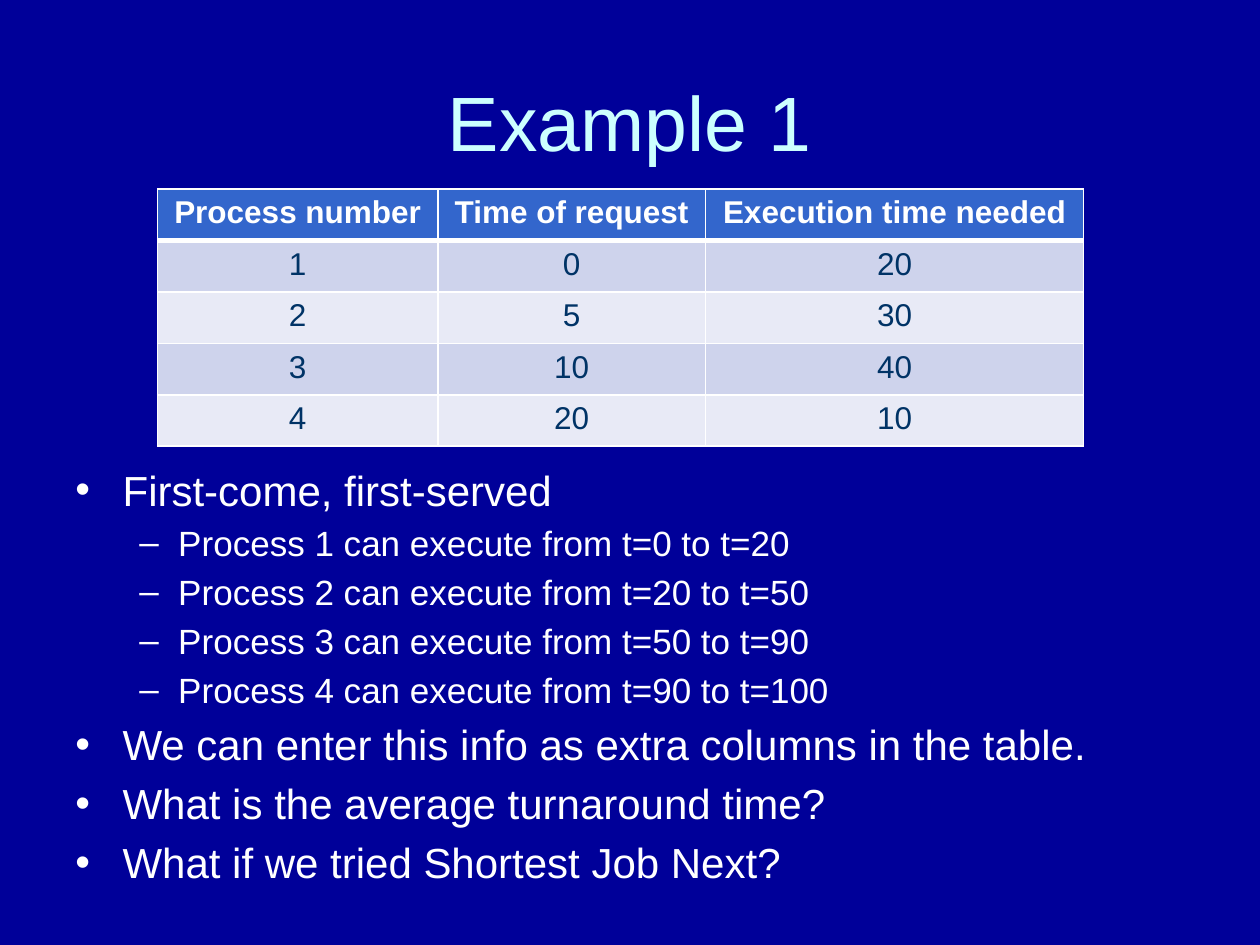
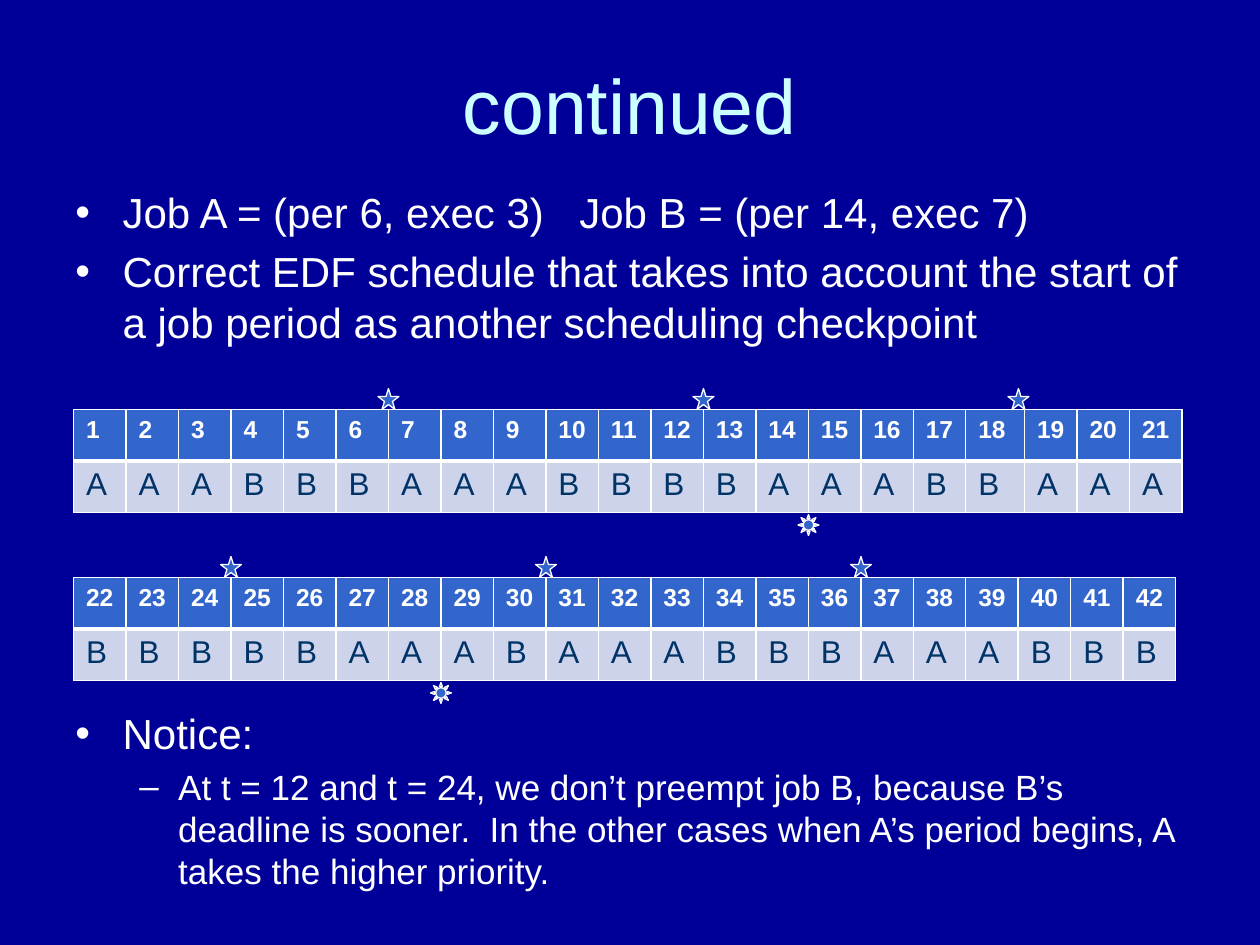
"""Build two slides on process scheduling: first-come first-served and an EDF timeline."""
from dataclasses import dataclass

from lxml import etree
from pptx import Presentation
from pptx.dml.color import RGBColor
from pptx.enum.shapes import MSO_SHAPE
from pptx.enum.text import MSO_ANCHOR, PP_ALIGN
from pptx.oxml.ns import qn
from pptx.util import Emu, Pt

STAR, SUN = MSO_SHAPE.STAR_5_POINT, MSO_SHAPE.SUN
LEFT, CENTER = PP_ALIGN.LEFT, PP_ALIGN.CENTER
TOP, MIDDLE = MSO_ANCHOR.TOP, MSO_ANCHOR.MIDDLE
EMU_PER_PX = 7620
PX_PER_POINT = 5 / 3


@dataclass(frozen=True)
class Theme:
    """Colours and type sizes shared by the slides."""
    font: str = "Arial"
    background: str = "000099"
    title: str = "CCFFFF"
    text: str = "FFFFFF"
    border: str = "FFFFFF"
    accent: str = "3366CC"
    cell_text: str = "003366"
    bands: tuple = ("CED3EC", "E8EAF6")
    title_size: int = 44
    level_sizes: tuple = (24, 20)
    table_size: int = 18
    time_size: int = 14
    line_height: float = 1.2
    paragraph_gap: float = 0.2


THEME = Theme()
BULLETS = (("•", 45, 45), ("–", 98, 37))

EXAMPLE_TITLE = "Example 1"
PROCESSES = [
    ("Process number", "Time of request", "Execution time needed"),
    (1, 0, 20),
    (2, 5, 30),
    (3, 10, 40),
    (4, 20, 10),
]
PROCESS_WIDTHS = (267, 255, 360)
EXAMPLE_POINTS = [
    (0, "First-come, first-served"),
    (1, "Process 1 can execute from t=0 to t=20"),
    (1, "Process 2 can execute from t=20 to t=50"),
    (1, "Process 3 can execute from t=50 to t=90"),
    (1, "Process 4 can execute from t=90 to t=100"),
    (0, "We can enter this info as extra columns in the table."),
    (0, "What is the average turnaround time?"),
    (0, "What if we tried Shortest Job Next?"),
]
EXAMPLE_ROWS_ABOVE = 4

EDF_TITLE = "continued"
EDF_POINTS = [
    (0, "Job A = (per 6, exec 3)\tJob B = (per 14, exec 7)"),
    (0, "Correct EDF schedule that takes into account the start of a job period "
        "as another scheduling checkpoint"),
    (0, "Notice:"),
    (1, "At t = 12 and t = 24, we don’t preempt job B, because B’s deadline is sooner.  "
        "In the other cases when A’s period begins, A takes the higher priority."),
]
EDF_ROWS_BEFORE = {"Notice:": 6}
SCHEDULES = ["AAABBBAAABBBBAAABBAAA", "BBBBBAAABAAABBBAAABBB"]
SCHEDULE_TOPS = (390, 550)
WIDE_TIME, WIDE_SLOT = 18, 56
PERIOD_A, PERIOD_B = 6, 14
SCHEDULE_LEFT, SLOT, MARKER = 70, 50, 20
ROW_HEIGHT = 49


def px(length):
    """Turn pixels into EMU."""
    return Emu(round(length * EMU_PER_PX))


def colour(value):
    """Turn a hex string into a colour."""
    return RGBColor.from_string(value)


def style_paragraph(paragraph, size, hue, bold=False, align=LEFT):
    """Format a paragraph and its runs."""
    paragraph.alignment = align
    for run in paragraph.runs:
        run.font.name = THEME.font
        run.font.size = Pt(size)
        run.font.bold = bold
        run.font.color.rgb = colour(hue)


def add_text_frame(slide, box, anchor, margin_top):
    """Add a wrapping text box and return its text frame."""
    text_frame = slide.shapes.add_textbox(*map(px, box)).text_frame
    text_frame.word_wrap = True
    text_frame.vertical_anchor = anchor
    text_frame.margin_top = px(margin_top)
    return text_frame


def add_titled_slide(presentation, title, top):
    """Add a blank slide with the shared background and title."""
    slide = presentation.slides.add_slide(presentation.slide_layouts[6])
    slide.background.fill.solid()
    slide.background.fill.fore_color.rgb = colour(THEME.background)
    text_frame = add_text_frame(slide, (60, top, 1080, 150), MIDDLE, 13)
    text_frame.text = title
    paragraph = text_frame.paragraphs[0]
    paragraph.line_spacing = Pt(THEME.title_size * THEME.line_height)
    style_paragraph(paragraph, THEME.title_size, THEME.title, align=CENTER)
    return slide


def add_bullet(paragraph, level):
    """Give a paragraph the bullet and hanging indent of its level."""
    mark, margin, hang = BULLETS[level]
    properties = paragraph._p.get_or_add_pPr()
    properties.set("marL", str(px(margin)))
    properties.set("indent", str(-px(hang)))
    etree.SubElement(properties, qn("a:buFont"), typeface=THEME.font)
    etree.SubElement(properties, qn("a:buChar"), char=mark)


def add_points(slide, points, top, rows_above=0, rows_before=None):
    """Add the bulleted body, leaving room measured in first-level rows."""
    row = THEME.level_sizes[0] * (THEME.line_height + THEME.paragraph_gap)
    margin_top = 8 + rows_above * row * PX_PER_POINT
    text_frame = add_text_frame(slide, (60, top, 1080, 594), TOP, margin_top)
    for index, (level, text) in enumerate(points):
        paragraph = text_frame.add_paragraph() if index else text_frame.paragraphs[0]
        paragraph.text = text
        paragraph.level = level
        size = THEME.level_sizes[level]
        style_paragraph(paragraph, size, THEME.text)
        paragraph.line_spacing = Pt(size * THEME.line_height)
        if index:
            skipped = (rows_before or {}).get(text, 0) * row
            paragraph.space_before = Pt(size * THEME.paragraph_gap + skipped)
        add_bullet(paragraph, level)


def add_borders(cell, top, bottom):
    """Draw the four cell borders, the top and bottom with given point widths."""
    properties = cell._tc.get_or_add_tcPr()
    for side, width in (("L", 1), ("R", 1), ("T", top), ("B", bottom)):
        line = etree.SubElement(properties, qn(f"a:ln{side}"), w=str(Pt(width)))
        fill = etree.SubElement(line, qn("a:solidFill"))
        etree.SubElement(fill, qn("a:srgbClr"), val=THEME.border)


def add_grid(slide, rows, left, top, widths, header_size, align):
    """Add a table with a header row and banded body rows."""
    frame = slide.shapes.add_table(len(rows), len(widths), px(left), px(top),
                                   px(sum(widths)), px(ROW_HEIGHT * len(rows)))
    table = frame.table
    table.horz_banding = False
    for column, width in zip(table.columns, widths):
        column.width = px(width)
    for row_index, values in enumerate(rows):
        header = row_index == 0
        fill = THEME.accent if header else THEME.bands[(row_index - 1) % 2]
        size = header_size if header else THEME.table_size
        hue = THEME.text if header else THEME.cell_text
        for column_index, value in enumerate(values):
            cell = table.cell(row_index, column_index)
            add_borders(cell, 3 if row_index == 1 else 1, 3 if header else 1)
            cell.fill.solid()
            cell.fill.fore_color.rgb = colour(fill)
            cell.text_frame.text = str(value)
            style_paragraph(cell.text_frame.paragraphs[0], size, hue, header, align)


def add_marker(slide, kind, time, drop):
    """Mark the end of a time slot at a distance below its schedule's top."""
    line, slot = divmod(time, len(SCHEDULES[0]))
    left = SCHEDULE_LEFT + slot * SLOT - MARKER / 2
    shape = slide.shapes.add_shape(kind, px(left), px(SCHEDULE_TOPS[line] + drop),
                                   px(MARKER), px(MARKER))
    shape.shadow.inherit = False
    shape.fill.solid()
    shape.fill.fore_color.rgb = colour(THEME.accent)
    shape.line.color.rgb = colour(THEME.border)
    shape.line.width = Pt(0.75)


def build_example(presentation):
    """Build the first-come, first-served slide."""
    slide = add_titled_slide(presentation, EXAMPLE_TITLE, 36)
    add_points(slide, EXAMPLE_POINTS, 210, rows_above=EXAMPLE_ROWS_ABOVE)
    add_grid(slide, PROCESSES, 150, 180, PROCESS_WIDTHS, THEME.table_size, CENTER)


def build_edf(presentation):
    """Build the EDF schedule slide."""
    slide = add_titled_slide(presentation, EDF_TITLE, 20)
    add_points(slide, EDF_POINTS, 170, rows_before=EDF_ROWS_BEFORE)
    start = 1
    for jobs, top in zip(SCHEDULES, SCHEDULE_TOPS):
        times = range(start, start + len(jobs))
        widths = [WIDE_SLOT if time == WIDE_TIME else SLOT for time in times]
        add_grid(slide, [times, jobs], SCHEDULE_LEFT, top, widths, THEME.time_size, LEFT)
        start += len(jobs)
    for kind, period, drop in ((STAR, PERIOD_A, -MARKER), (SUN, PERIOD_B, 2 * SLOT)):
        for time in range(period, start - 1, period):
            add_marker(slide, kind, time, drop)


def main():
    """Build and save the presentation."""
    presentation = Presentation()
    presentation.slide_width, presentation.slide_height = px(1200), px(900)
    build_example(presentation)
    build_edf(presentation)
    presentation.save("out.pptx")


if __name__ == "__main__":
    main()
